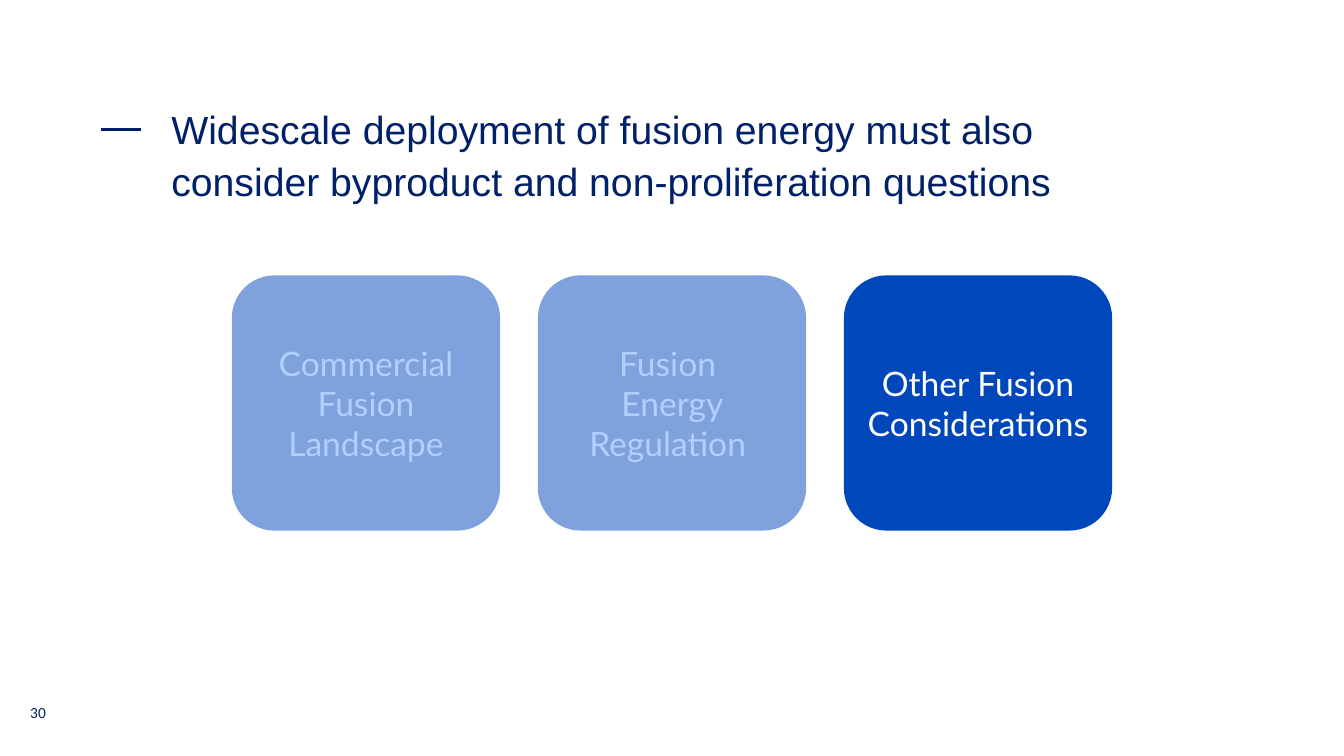
"""Build the section slide on other fusion considerations."""
from lxml.etree import SubElement
from pptx import Presentation
from pptx.dml.color import RGBColor
from pptx.enum.shapes import MSO_CONNECTOR as Connector, MSO_SHAPE as Shape
from pptx.enum.text import MSO_ANCHOR as Anchor, MSO_AUTO_SIZE as AutoSize, PP_ALIGN as Align
from pptx.oxml.ns import qn
from pptx.util import Pt

NAVY = RGBColor(0x00, 0x21, 0x69)
BLUE = RGBColor(0x00, 0x47, 0xBB)
PALE_BLUE = RGBColor(0xB2, 0xD0, 0xFF)
WHITE = RGBColor(0xFF, 0xFF, 0xFF)


class SlideBuilder:
    heading_font, number_font, card_font = "Arial", "Calibri", "Lato"

    def __init__(self, presentation):
        self.slide = presentation.slides.add_slide(presentation.slide_layouts[5])

    def add_text(self, paragraph, text, font, size, color, align=Align.LEFT):
        paragraph.alignment = align
        for index, line in enumerate(text.split("\n")):
            if index:
                paragraph.add_line_break()
            run = paragraph.add_run()
            run.text = line
            run.font.name = font
            run.font.size = Pt(size)
            run.font.color.rgb = color

    def set_margins(self, frame, horizontal, vertical):
        frame.margin_left = frame.margin_right = Pt(horizontal)
        frame.margin_top = frame.margin_bottom = Pt(vertical)

    def title(self, text, left, top, width, height):
        shape = self.slide.shapes.title
        shape.left, shape.top, shape.width, shape.height = map(Pt, (left, top, width, height))
        frame = shape.text_frame
        self.set_margins(frame, 0, 0)
        frame.word_wrap = True
        frame.auto_size = AutoSize.NONE
        frame.vertical_anchor = Anchor.TOP
        paragraph = frame.paragraphs[0]
        paragraph.line_spacing = 1.1
        paragraph.space_before = Pt(0)
        self.add_text(paragraph, text, self.heading_font, 28, NAVY)

    def dash(self, left, top, width):
        line = self.slide.shapes.add_connector(
            Connector.STRAIGHT, Pt(left), Pt(top), Pt(left + width), Pt(top))
        line.line.color.rgb = NAVY
        line.line.width = Pt(2.5)
        SubElement(line._element.spPr, qn("a:effectLst"))

    def page_number(self, text, left, top, width, height):
        shape = self.slide.shapes.add_textbox(Pt(left), Pt(top), Pt(width), Pt(height))
        frame = shape.text_frame
        frame.word_wrap = True
        self.set_margins(frame, 0, 3.6)
        self.add_text(frame.paragraphs[0], text, self.number_font, 11, NAVY)

    def card(self, group, text, left, top, width, height, active):
        shape = group.shapes.add_shape(
            Shape.ROUNDED_RECTANGLE, Pt(left), Pt(top), Pt(width), Pt(height))
        shape.shadow.inherit = False
        shape.line.fill.background()
        shape.fill.solid()
        shape.fill.fore_color.rgb = BLUE
        if not active:
            color = shape._element.spPr.find(qn("a:solidFill"))[0]
            SubElement(color, qn("a:alpha"), val="50000")
        frame = shape.text_frame
        frame.word_wrap = True
        frame.vertical_anchor = Anchor.MIDDLE
        self.add_text(frame.paragraphs[0], text, self.card_font, 24,
                      WHITE if active else PALE_BLUE, Align.CENTER)

    def cards(self, labels, active_label, left, top, width, height, gap):
        group = self.slide.shapes.add_group_shape()
        for index, label in enumerate(labels):
            self.card(group, label, left + index * (width + gap), top, width, height,
                      label == active_label)


def main():
    presentation = Presentation()
    presentation.slide_width, presentation.slide_height = Pt(960), Pt(540)
    builder = SlideBuilder(presentation)
    builder.dash(72, 92.5, 28.8)
    builder.title("Widescale deployment of fusion energy must also consider "
                  "byproduct and non-proliferation questions", 122.4, 72, 712.8, 72)
    builder.page_number("30", 21.6, 499, 34.6, 28.8)
    labels = ("Commercial Fusion Landscape", "Fusion \nEnergy Regulation ",
              "Other Fusion Considerations")
    builder.cards(labels, labels[-1], 165.6, 196.7, 191.6, 182.3, 27)
    presentation.save("out.pptx")


if __name__ == "__main__":
    main()
